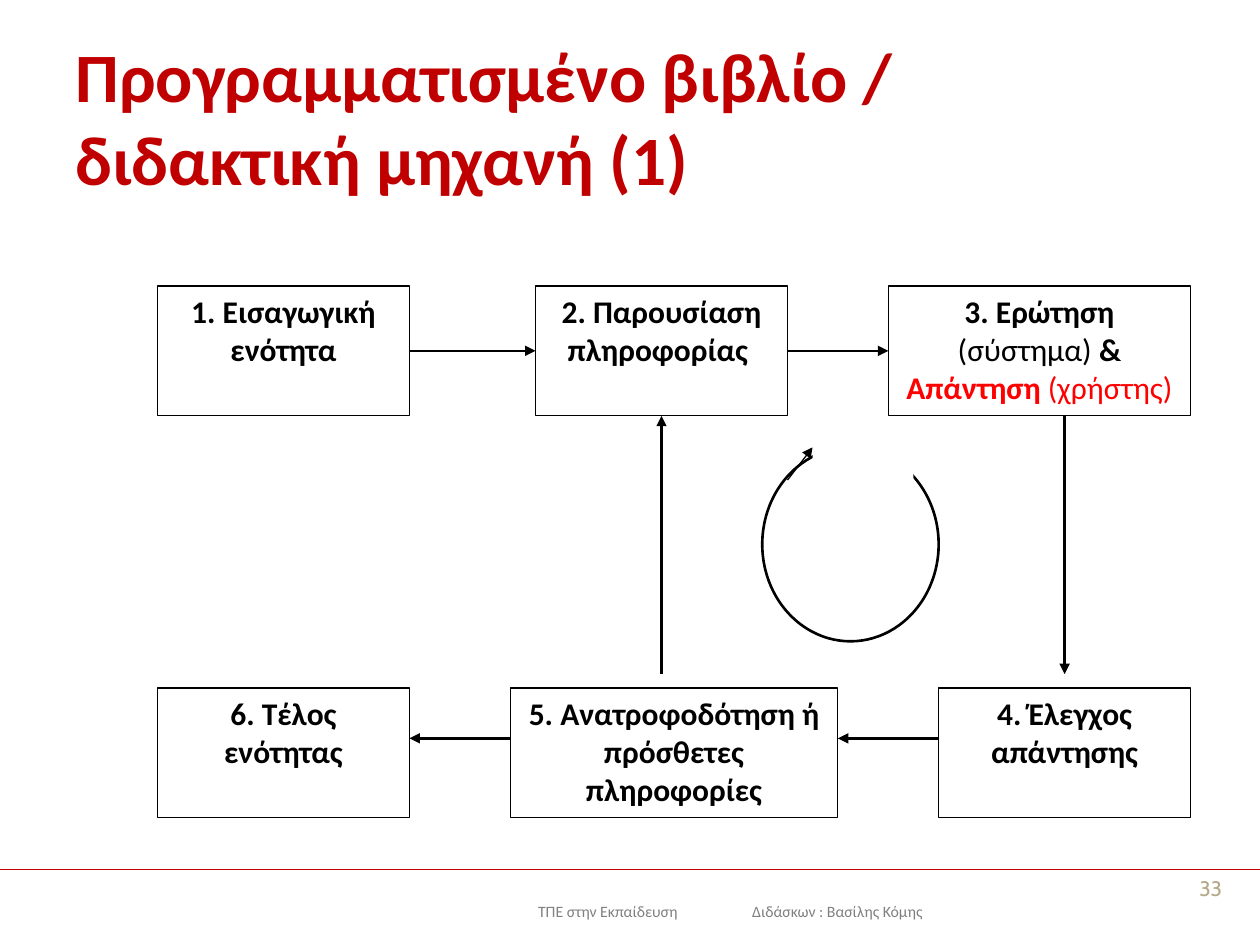
"""Build a slide showing the six-step loop of programmed instruction."""
from pptx import Presentation
from pptx import util as u
from pptx.dml.color import RGBColor
from pptx.enum import shapes, text
from pptx.oxml.ns import qn
from lxml import etree

COLORS = {"title": "C00000", "rule": "C40008", "ink": "000000", "paper": "FFFFFF",
          "answer": "FF0000", "footer": "808080", "number": "B5A788"}


def add_run(p, words, size, color, bold=False, font="Calibri"):
    r = p.add_run()
    r.text = words
    r.font.name, r.font.size, r.font.bold = font, u.Pt(size), bold
    r.font.color.rgb = RGBColor.from_string(COLORS[color])


def add_line(x1, y1, x2, y2, color="ink", width=1.5, arrow=True):
    c = s.shapes.add_connector(shapes.MSO_CONNECTOR.STRAIGHT, u.Inches(x1), u.Inches(y1),
                               u.Inches(x2), u.Inches(y2))
    c.line.color.rgb = RGBColor.from_string(COLORS[color])
    c.line.width = u.Pt(width)
    if arrow:
        etree.SubElement(c.line._get_or_add_ln(), qn("a:tailEnd"), type="triangle")
    etree.SubElement(c._element.spPr, qn("a:effectLst"))
    return c


prs = Presentation()
prs.slide_width, prs.slide_height = u.Inches(10), u.Inches(7.5)
s = prs.slides.add_slide(prs.slide_layouts[5])

title = s.shapes.title
title.left, title.top = u.Inches(0.5), u.Inches(0.3)
title.width, title.height = u.Inches(9), u.Inches(1.25)
tf = title.text_frame
tf.auto_size = text.MSO_AUTO_SIZE.NONE
tf.vertical_anchor = text.MSO_ANCHOR.MIDDLE
p = tf.paragraphs[0]
p.alignment = text.PP_ALIGN.LEFT
add_run(p, "Προγραμματισμένο βιβλίο / διδακτική μηχανή (1)", 39.6, "title", True)

add_line(0, 6.9, 10, 6.9, "rule", 1, False)
footer = s.shapes.add_textbox(u.Inches(2.93), u.Inches(7.11), u.Inches(5.75), u.Inches(0.25))
tf = footer.text_frame
tf.word_wrap = True
tf.margin_left = u.Inches(1.34)
p = tf.paragraphs[0]
tabs = etree.SubElement(p._p.get_or_add_pPr(), qn("a:tabLst"))
etree.SubElement(tabs, qn("a:tab"), pos=str(u.Inches(1.7)), algn="l")
add_run(p, "ΤΠΕ στην Εκπαίδευση\tΔιδάσκων : Βασίλης Κόμης", 9, "footer")

number = s.shapes.add_textbox(u.Inches(9.42), u.Inches(6.9), u.Inches(0.5), u.Inches(0.52))
number.text_frame.word_wrap = True
add_run(number.text_frame.paragraphs[0], "33", 12, "number", font="Cabin")

loop = s.shapes.add_shape(shapes.MSO_SHAPE.OVAL, u.Inches(6.05), u.Inches(3.55),
                          u.Inches(1.4), u.Inches(1.54))
loop.line.color.rgb = RGBColor.from_string(COLORS["ink"])
loop.line.width = u.Pt(1.5)
add_line(6.25, 3.81, 6.45, 3.55, width=0.75)
gap = s.shapes.add_shape(shapes.MSO_SHAPE.RECTANGLE, u.Inches(6.45), u.Inches(3.29),
                         u.Inches(0.8), u.Inches(0.77))
gap.line.fill.background()
for sp in (loop, gap):
    sp.shadow.inherit = False
    sp.fill.solid()
    sp.fill.fore_color.rgb = RGBColor.from_string(COLORS["paper"])

TOP, BOTTOM, HEIGHT = 2.27, 5.46, 1.03
steps = [
    (1.25, TOP, 2, [("1. Εισαγωγική ενότητα", "ink", True)]),
    (4.25, TOP, 2, [("2. Παρουσίαση πληροφορίας ", "ink", True)]),
    (7.05, TOP, 2.4, [("3. Ερώτηση ", "ink", True), ("(σύστημα) ", "ink", False),
                      ("& ", "ink", True), ("Απάντηση ", "answer", True),
                      ("(χρήστης)", "answer", False)]),
    (7.45, BOTTOM, 2, [("4. Έλεγχος απάντησης", "ink", True)]),
    (4.05, BOTTOM, 2.6, [("5. Ανατροφοδότηση ή πρόσθετες πληροφορίες", "ink", True)]),
    (1.25, BOTTOM, 2, [("6. Τέλος ενότητας", "ink", True)]),
]
boxes = []
for x, y, width, runs in steps:
    sp = s.shapes.add_shape(shapes.MSO_SHAPE.RECTANGLE, u.Inches(x), u.Inches(y),
                            u.Inches(width), u.Inches(HEIGHT))
    sp.shadow.inherit = False
    sp.fill.solid()
    sp.fill.fore_color.rgb = RGBColor.from_string(COLORS["paper"])
    sp.line.color.rgb = RGBColor.from_string(COLORS["ink"])
    sp.line.width = u.Pt(0.75)
    tf = sp.text_frame
    tf.word_wrap = True
    tf.vertical_anchor = text.MSO_ANCHOR.TOP
    p = tf.paragraphs[0]
    p.alignment = text.PP_ALIGN.CENTER
    p.space_after = u.Pt(10)
    for words, color, bold in runs:
        add_run(p, words, 18, color, bold)
    boxes.append(sp)

for start, end in zip(boxes[:2], boxes[1:3]):
    c = add_line(3.25, 2.78, 4.25, 2.78)
    c.begin_connect(start, 3)
    c.end_connect(end, 1)
add_line(8.45, 3.3, 8.45, 5.35)
for x in (7.45, 4.05):
    add_line(x, 5.86, x - 0.8, 5.86)
add_line(5.25, 5.35, 5.25, 3.3).end_connect(boxes[1], 2)

prs.save("out.pptx")
